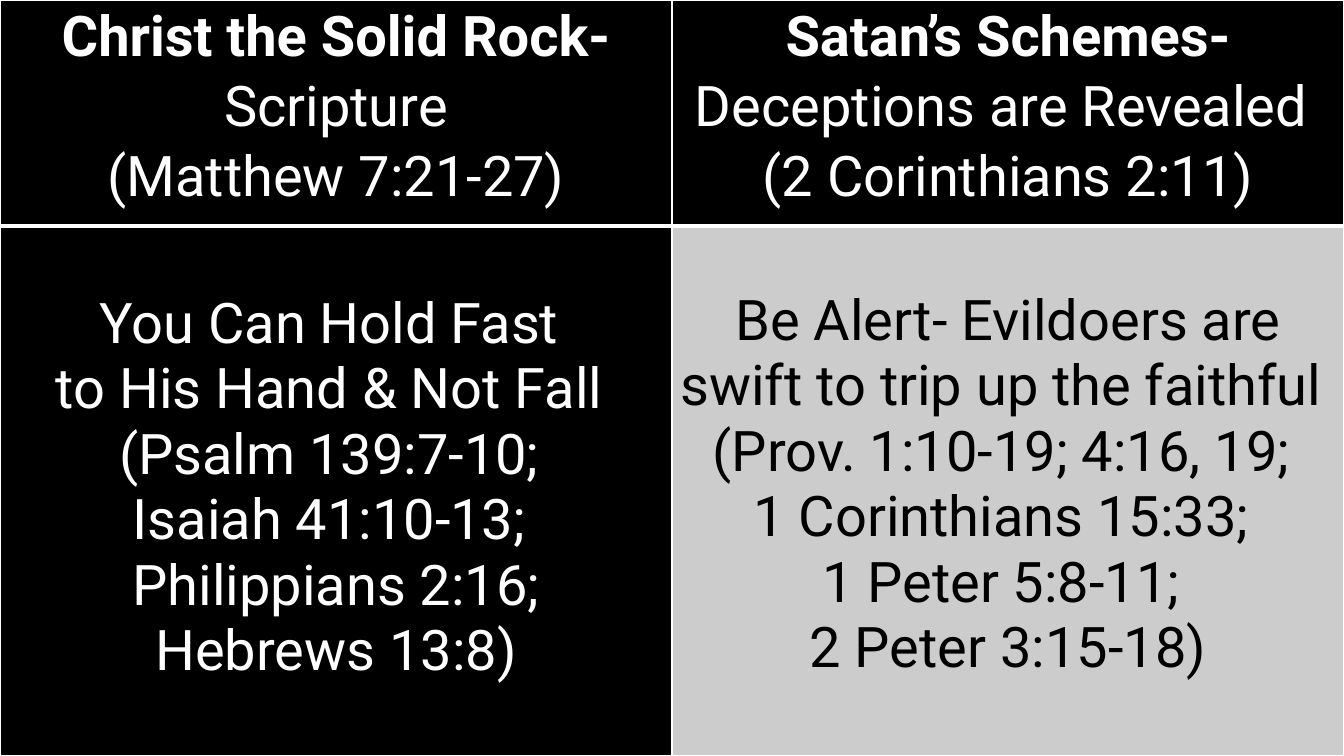
from lxml import etree
from pptx import Presentation
from pptx.dml.color import RGBColor
from pptx.enum.text import MSO_ANCHOR, PP_ALIGN
from pptx.oxml.ns import qn
from pptx.util import Inches, Pt

CENTER = PP_ALIGN.CENTER
TOP = MSO_ANCHOR.TOP
BLACK, WHITE, GRAY = "000000", "FFFFFF", "CCCCCC"
SLIDE_WIDTH, SLIDE_HEIGHT = 13.33, 7.5
HEADER_HEIGHT = 2.24
THIN, THICK = 1, 3

# Each header: bold lead-in, theme, reference
HEADERS = [
    ("Christ the Solid Rock- ", "Scripture", "(Matthew 7:21-27)"),
    ("Satan’s Schemes- ", "Deceptions are Revealed ", "(2 Corinthians 2:11)"),
]

# Each message: lines, text colour, fill, top margin
MESSAGES = [
    (["You Can Hold Fast ", "to His Hand & Not Fall ", "(Psalm 139:7-10; ",
      "Isaiah 41:10-13; ", "Philippians 2:16;", "Hebrews 13:8)"],
     WHITE, BLACK, 0.65),
    (["Be Alert- Evildoers are swift to trip up the faithful ",
      "(Prov. 1:10-19; 4:16, 19; ", "1 Corinthians 15:33; ",
      "1 Peter 5:8-11; ", "2 Peter 3:15-18)"],
     BLACK, GRAY, 0.62),
]


def rgb(value):
    return RGBColor.from_string(value)


def set_borders(cell, widths):
    properties = cell._tc.get_or_add_tcPr()
    for position, (side, points) in enumerate(widths.items()):
        border = etree.Element(qn(f"a:ln{side}"), w=str(Pt(points)))
        fill = etree.SubElement(border, qn("a:solidFill"))
        etree.SubElement(fill, qn("a:srgbClr"), val=WHITE)
        properties.insert(position, border)


def format_cell(cell, fill, top_margin=0, top_border=THIN, bottom_border=THIN):
    layout = {
        "margin_left": Inches(0.07), "margin_right": Inches(0.07),
        "margin_top": Inches(top_margin), "margin_bottom": 0,
        "vertical_anchor": TOP,
    }
    for name, value in layout.items():
        setattr(cell, name, value)
    cell.fill.solid()
    cell.fill.fore_color.rgb = rgb(fill)
    set_borders(cell, {"L": THIN, "R": THIN, "T": top_border, "B": bottom_border})


def write_lines(cell, lines, color, spacing=None):
    """Write one paragraph per line; a line is a list of (text, bold) pieces."""
    frame = cell.text_frame
    for index, pieces in enumerate(lines):
        paragraph = frame.add_paragraph() if index else frame.paragraphs[0]
        paragraph.alignment = CENTER
        paragraph.line_spacing = spacing
        for text, bold in pieces:
            run = paragraph.add_run()
            run.text = text
            run.font.color.rgb = rgb(color)
            for name, value in {"name": "Roboto", "size": Pt(40), "bold": bold}.items():
                setattr(run.font, name, value)


def add_comparison(slide):
    table = slide.shapes.add_table(
        2, len(HEADERS), 0, 0, Inches(SLIDE_WIDTH), Inches(SLIDE_HEIGHT)).table
    table.rows[0].height = Inches(HEADER_HEIGHT)
    table.rows[1].height = Inches(SLIDE_HEIGHT - HEADER_HEIGHT)

    # Header row
    for column, (lead, theme, reference) in enumerate(HEADERS):
        cell = table.cell(0, column)
        format_cell(cell, BLACK, bottom_border=THICK)
        write_lines(cell, [[(lead, True), (theme, False)], [(reference, False)]],
                    WHITE, 1.07)

    # Message row
    for column, (lines, color, fill, top_margin) in enumerate(MESSAGES):
        cell = table.cell(1, column)
        format_cell(cell, fill, top_margin, top_border=THICK)
        write_lines(cell, [[(line, False)] for line in lines], color)


def main():
    deck = Presentation()
    deck.slide_width = Inches(SLIDE_WIDTH)
    deck.slide_height = Inches(SLIDE_HEIGHT)
    slide = deck.slides.add_slide(deck.slide_layouts[6])
    slide.background.fill.solid()
    slide.background.fill.fore_color.rgb = rgb(BLACK)
    add_comparison(slide)
    deck.save("out.pptx")


if __name__ == "__main__":
    main()
